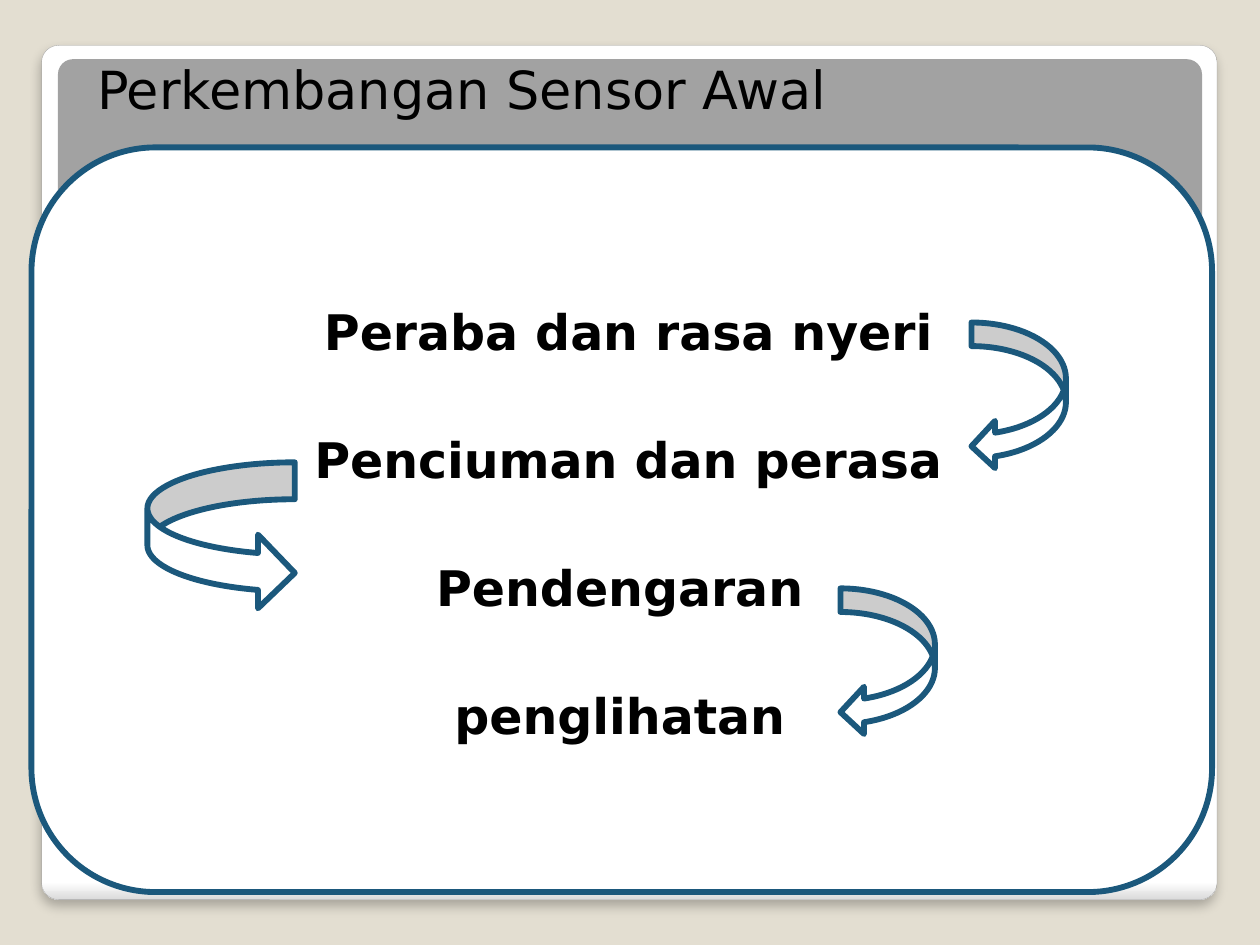
import pptx
import pptx.util
import pptx.dml.color
import pptx.enum.shapes
import pptx.enum.text
import pptx.oxml
import pptx.oxml.ns

Inches = pptx.util.Inches
Pt = pptx.util.Pt
RGBColor = pptx.dml.color.RGBColor
SHAPE = pptx.enum.shapes.MSO_SHAPE
ALIGN = pptx.enum.text.PP_ALIGN
ANCHOR = pptx.enum.text.MSO_ANCHOR

SAND = RGBColor(0xE3, 0xDE, 0xD1)
WHITE = RGBColor(0xFF, 0xFF, 0xFF)
BLACK = RGBColor(0x00, 0x00, 0x00)
GREY = RGBColor(0xA2, 0xA2, 0xA2)
EDGE = RGBColor(0xA4, 0xA4, 0xA4)
BLUE = RGBColor(0x1B, 0x58, 0x7C)
FONT = "DejaVu Sans"

presentation = pptx.Presentation()
presentation.slide_width = Inches(10)
presentation.slide_height = Inches(7.5)
slide = presentation.slides.add_slide(presentation.slide_layouts[5])
slide.background.fill.solid()
slide.background.fill.fore_color.rgb = SAND


def add_filled_shape(kind, box, fill, line=None, width=0):
    shape = slide.shapes.add_shape(kind, *[Inches(value) for value in box])
    shape.shadow.inherit = False
    shape.fill.solid()
    shape.fill.fore_color.rgb = fill
    if line is None:
        shape.line.fill.background()
    else:
        shape.line.color.rgb = line
        shape.line.width = Pt(width)
    return shape


def format_paragraph(paragraph, text, alignment, font_values):
    paragraph.text = text
    paragraph.alignment = alignment
    for name, value in font_values.items():
        setattr(paragraph.font, name, value)
    paragraph.font.color.rgb = BLACK


# Card with a soft shadow and a shaded bottom edge
card = add_filled_shape(SHAPE.ROUNDED_RECTANGLE, (0.33, 0.36, 9.33, 6.78), WHITE, EDGE, 0.16)
card.fill.gradient()
card.fill.gradient_angle = 270
stops = card.fill.gradient_stops
for stop, position, color in zip(stops, (0.98, 1), (WHITE, RGBColor(0xDA, 0xDA, 0xDA))):
    stop.position = position
    stop.color.rgb = color
effects = card.element.spPr.find(pptx.oxml.ns.qn("a:effectLst"))
effects.append(pptx.oxml.parse_xml(
    f'<a:outerShdw {pptx.oxml.ns.nsdecls("a")} blurRad="{Pt(6)}" dist="{Pt(4)}" '
    'dir="5400000" algn="t" rotWithShape="0">'
    '<a:srgbClr val="000000"><a:alpha val="25000"/></a:srgbClr></a:outerShdw>'))

# Grey panel behind the title
panel = add_filled_shape(SHAPE.ROUNDED_RECTANGLE, (0.46, 0.47, 9.08, 6), GREY)
for shape in (card, panel):
    shape.adjustments[0] = 0.02

# Title, in front of card and panel
title = slide.shapes.title
panel.element.addnext(title.element)
title.left, title.top, title.width, title.height = [
    Inches(value) for value in (0.67, 0.17, 8.95, 0.83)]
title.text_frame.vertical_anchor = ANCHOR.BOTTOM
title.text_frame.auto_size = pptx.enum.text.MSO_AUTO_SIZE.NONE
format_paragraph(title.text_frame.paragraphs[0], "Perkembangan Sensor Awal", ALIGN.LEFT,
                 {"name": FONT, "size": Pt(30), "bold": False})

# Rounded body with the order of the senses
body = add_filled_shape(SHAPE.ROUNDED_RECTANGLE, (0.25, 1.17, 9.37, 5.91), WHITE, BLUE, 3.35)
frame = body.text_frame
frame_values = {
    "word_wrap": True,
    "vertical_anchor": ANCHOR.MIDDLE,
    "margin_left": Inches(0.2),
    "margin_top": Inches(0.1),
    "margin_right": Inches(0.1),
    "margin_bottom": Inches(0.05),
}
for name, value in frame_values.items():
    setattr(frame, name, value)
senses = ["Peraba dan rasa nyeri", "Penciuman dan perasa", "Pendengaran ", "penglihatan "]
for index, sense in enumerate(senses):
    paragraph = frame.add_paragraph() if index else frame.paragraphs[0]
    format_paragraph(paragraph, sense, ALIGN.CENTER,
                     {"name": FONT, "size": Pt(28), "bold": True})
    paragraph.space_before = Pt(39.5 if index else 0)

# Curved arrows from one sense to the next
arrows = [
    (SHAPE.CURVED_LEFT_ARROW, (7.71, 2.56, 0.75, 1.17)),
    (SHAPE.CURVED_LEFT_ARROW, (6.67, 4.67, 0.75, 1.17)),
    (SHAPE.CURVED_RIGHT_ARROW, (1.17, 3.67, 1.17, 1.17)),
]
for kind, box in arrows:
    add_filled_shape(kind, box, WHITE, BLUE, 3.35)

presentation.save("out.pptx")
